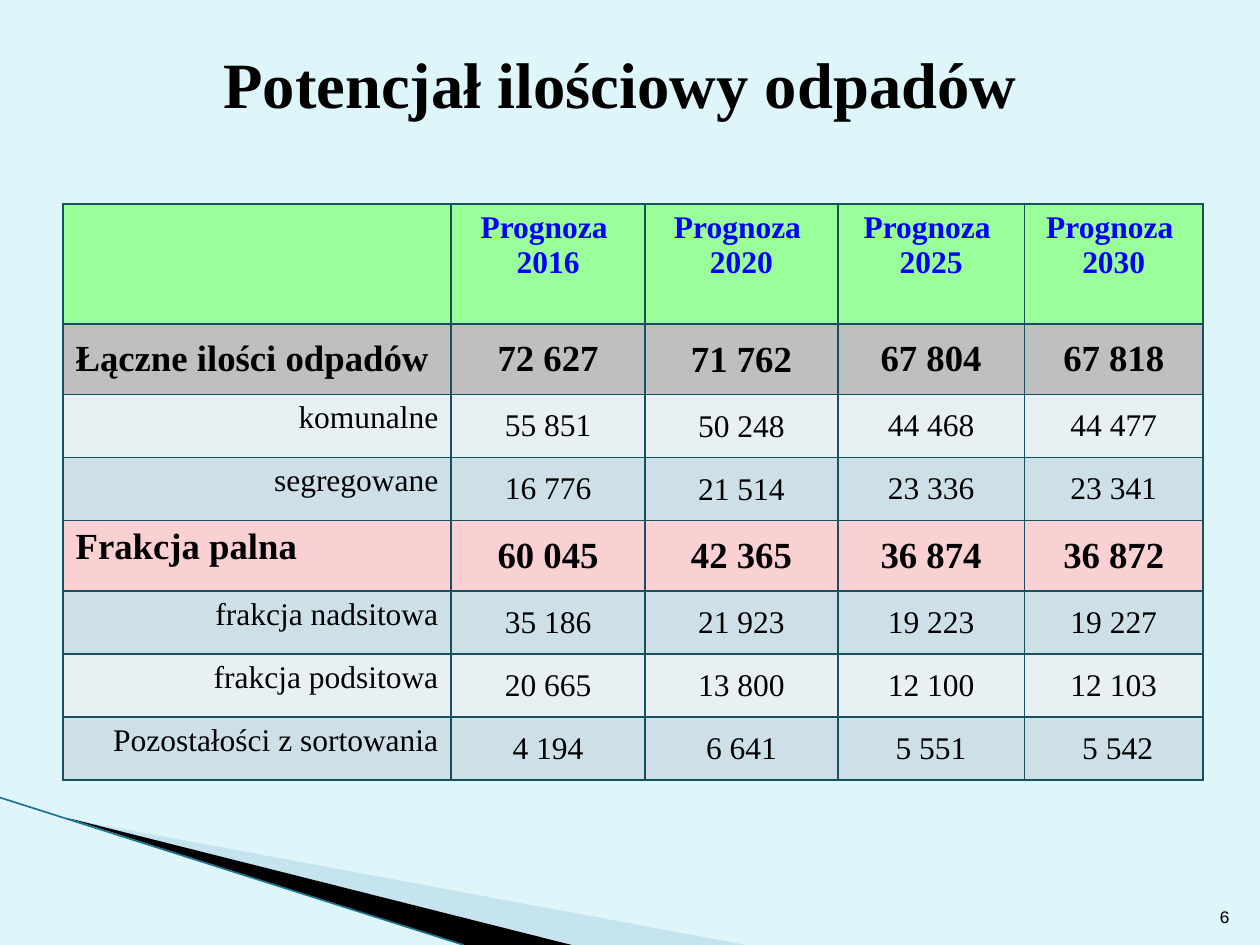
from lxml import etree
from pptx import Presentation
from pptx.dml.color import RGBColor
from pptx.enum import shapes, text
from pptx.oxml import ns
from pptx.util import Inches, Pt

SERIF = "Times New Roman"
BLACK = "000000"
LEFT, CENTER, RIGHT = text.PP_ALIGN.LEFT, text.PP_ALIGN.CENTER, text.PP_ALIGN.RIGHT
TOP, MIDDLE = text.MSO_ANCHOR.TOP, text.MSO_ANCHOR.MIDDLE


def color(value):
    return RGBColor.from_string(value)


def write(frame, words, size, align, bold=False, ink=BLACK, font=SERIF):
    """Fill a text frame with one paragraph and format its runs."""
    frame.word_wrap = True
    para = frame.paragraphs[0]
    para.text = words
    para.alignment = align
    for span in para.runs:
        span.font.name = font
        span.font.size = Pt(size)
        span.font.bold = bold
        span.font.color.rgb = color(ink)


deck = Presentation()
deck.slide_width, deck.slide_height = Inches(10), Inches(7.5)
page = deck.slides.add_slide(deck.slide_layouts[6])
page.background.fill.solid()
page.background.fill.fore_color.rgb = color("DEF5FA")

# Corner wedges
wedges = [
    ("A0CBDC", 40, [(0.55, 6.5), (5.92, 7.5), (4.56, 7.5)]),
    (BLACK, 100, [(0.53, 6.49), (4.54, 7.5), (3.68, 7.5)]),
]
for fill, opacity, points in wedges:
    corners = [(Inches(x), Inches(y)) for x, y in points]
    builder = page.shapes.build_freeform(*corners[0])
    builder.add_line_segments(corners[1:], close=True)
    wedge = builder.convert_to_shape()
    wedge.shadow.inherit = False
    wedge.line.fill.background()
    wedge.fill.solid()
    wedge.fill.fore_color.rgb = color(fill)
    if opacity < 100:
        tint = wedge._element.spPr.find(".//" + ns.qn("a:srgbClr"))
        etree.SubElement(tint, ns.qn("a:alpha"), val=str(opacity * 1000))

edge = page.shapes.add_connector(
    shapes.MSO_CONNECTOR.STRAIGHT, Inches(0), Inches(6.33), Inches(3.68), Inches(7.5))
edge.line.color.rgb = color("1B7590")
edge.line.width = Pt(0.95)
etree.SubElement(edge._element.spPr, ns.qn("a:effectLst"))

# Forecast table
HEADER, TOTAL, LIGHT, DARK, BURNABLE = "99FF99", "BFBFBF", "E8F0F4", "CDE0E8", "F9D1D3"
widths = [3.08, 1.54, 1.53, 1.48, 1.42]
years = [2016, 2020, 2025, 2030]
rows = [
    (HEADER, 0.95, [""] + [f"Prognoza \v{year}" for year in years]),
    (TOTAL, 0.56, ["Łączne ilości odpadów", "72 627", "71 762", "67 804", "67 818"]),
    (LIGHT, 0.5, ["komunalne", "55 851", "50 248", "44 468", "44 477"]),
    (DARK, 0.5, ["segregowane", "16 776", "21 514", "23 336", "23 341"]),
    (BURNABLE, 0.56, ["Frakcja palna", "60 045", "42 365", "36 874", "36 872"]),
    (DARK, 0.5, ["frakcja nadsitowa", "35 186", "21 923", "19 223", "19 227"]),
    (LIGHT, 0.5, ["frakcja podsitowa", "20 665", "13 800", "12 100", "12 103"]),
    (DARK, 0.5, ["Pozostałości z sortowania", "4 194", "6 641", "5 551", " 5 542"]),
]
table = page.shapes.add_table(
    len(rows), len(widths), Inches(0.5), Inches(1.62),
    Inches(sum(widths)), Inches(sum(row[1] for row in rows))).table
table.first_row = table.horz_banding = False
for column, width in zip(table.columns, widths):
    column.width = Inches(width)

for r, (fill, height, entries) in enumerate(rows):
    table.rows[r].height = Inches(height)
    header = fill == HEADER
    main = fill in (TOTAL, BURNABLE)
    for c, entry in enumerate(entries):
        cell = table.cell(r, c)
        if c or header:
            align = CENTER
        else:
            align = LEFT if main else RIGHT
        write(cell.text_frame, entry, 21 if main else 18, align,
              bold=header or main, ink="0000FF" if header else BLACK)
        centred = not header and (c > 0 or fill == TOTAL)
        cell.vertical_anchor = MIDDLE if centred else TOP
        if c == 2 and not header:
            cell.margin_left = cell.margin_right = cell.margin_top = Inches(0.01)
            cell.margin_bottom = 0
        props = cell._tc.get_or_add_tcPr()
        for side in ("lnL", "lnR", "lnT", "lnB"):
            border = etree.SubElement(props, ns.qn("a:" + side), w=str(Pt(1)))
            paint = etree.SubElement(border, ns.qn("a:solidFill"))
            etree.SubElement(paint, ns.qn("a:srgbClr"), val="175160")
        cell.fill.solid()
        cell.fill.fore_color.rgb = color(fill)

# Title and page number
title = page.shapes.add_textbox(Inches(0.5), Inches(0.3), Inches(9), Inches(1.25))
write(title.text_frame, "Potencjał ilościowy odpadów", 36.9, CENTER, bold=True)
title.text_frame.vertical_anchor = TOP
title.text_frame.margin_right = Inches(0.25)

number = page.shapes.add_textbox(Inches(9.46), Inches(7.01), Inches(0.4), Inches(0.4))
write(number.text_frame, "6", 10, RIGHT, font="Courier New")
number.text_frame.vertical_anchor = text.MSO_ANCHOR.BOTTOM

deck.save("out.pptx")
